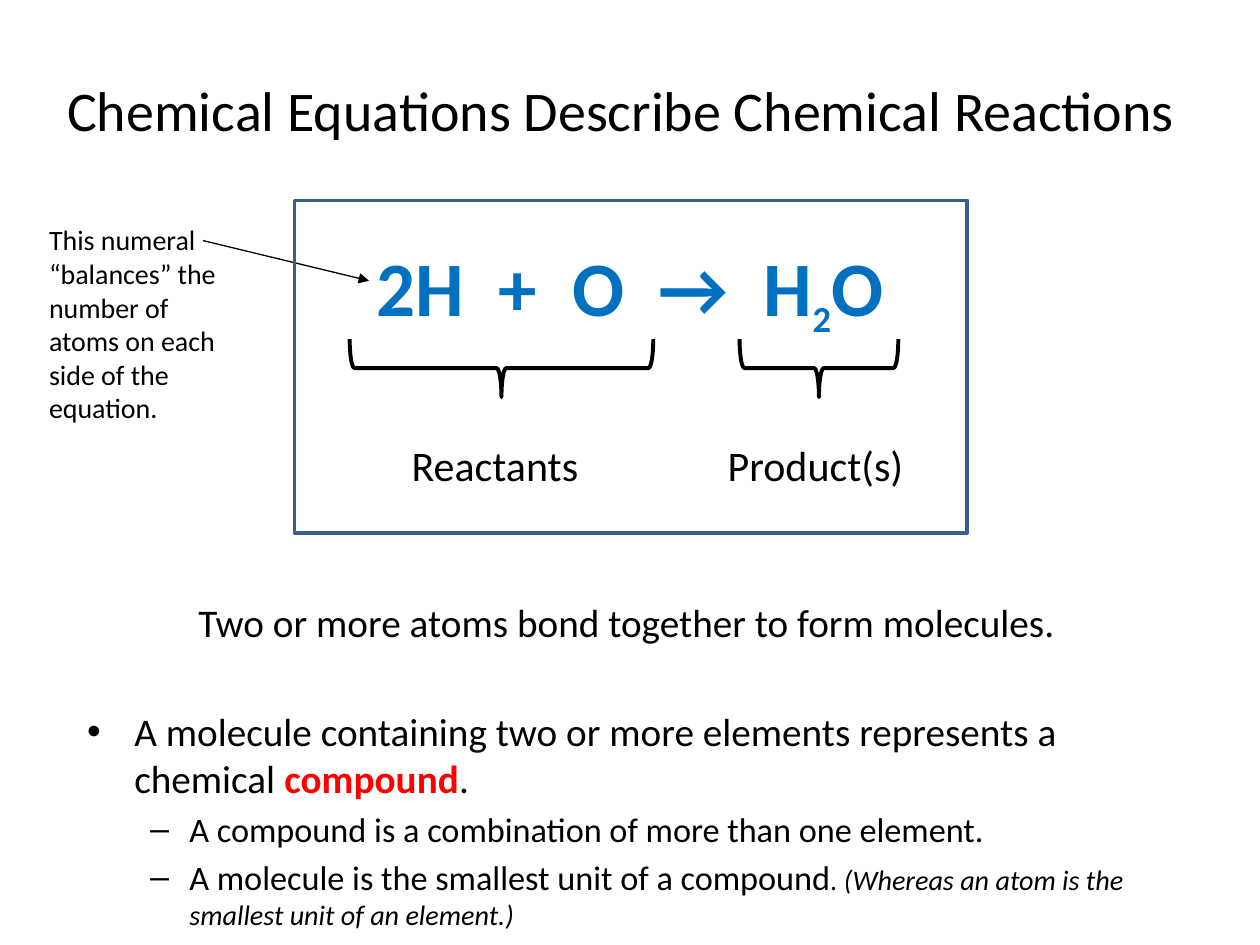
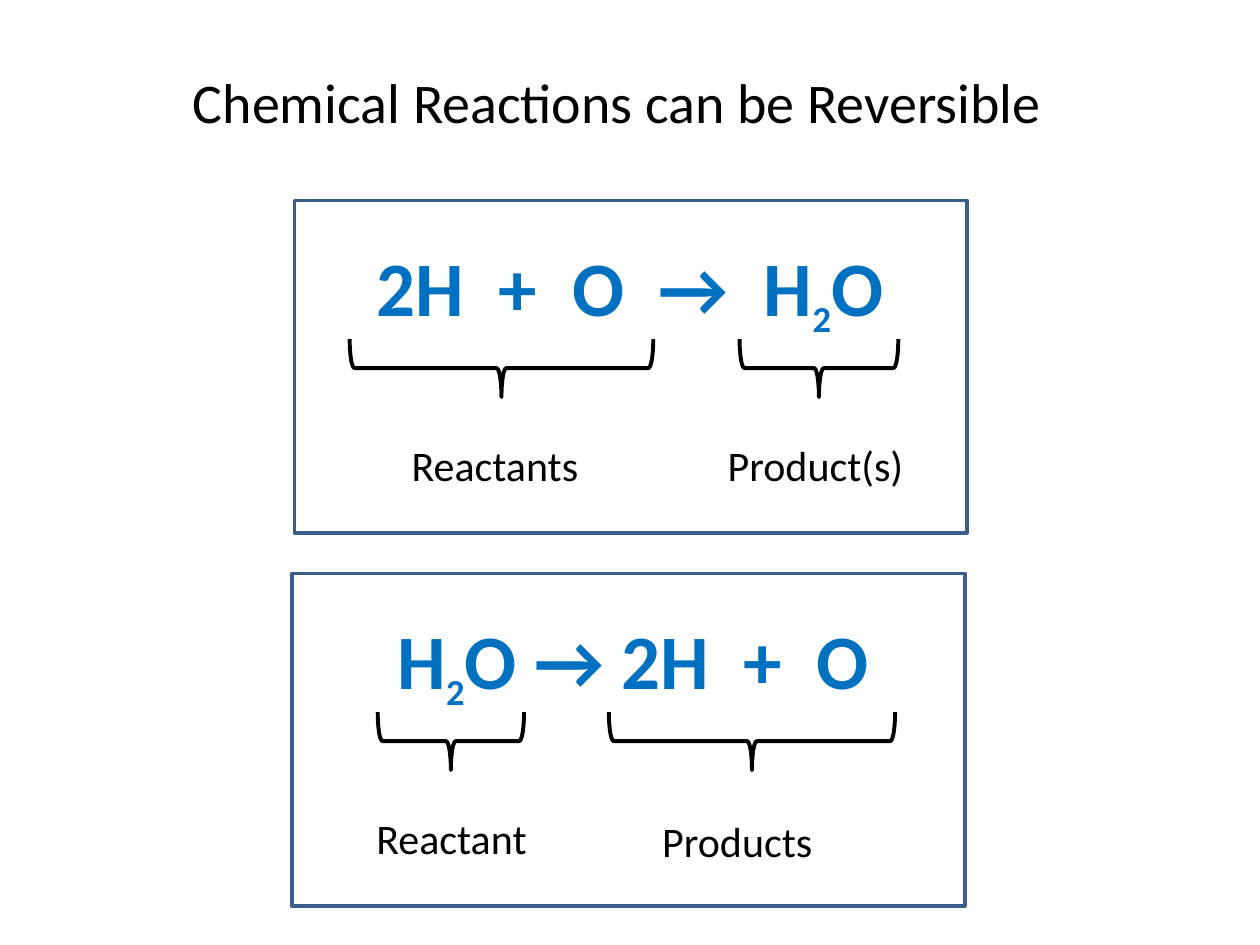
"""Build two slides on chemical equations and reversible reactions."""
from dataclasses import dataclass

from pptx import Presentation
from pptx import util as u
from pptx.dml.color import RGBColor
from pptx.enum import shapes, text
from pptx.oxml.ns import qn
from lxml import etree


@dataclass(frozen=True)
class Theme:
    """Colours, font and type sizes of the deck."""
    face: str = "Calibri"
    ink: str = "000000"
    blue: str = "0070C0"
    red: str = "FF0000"
    frame: str = "3A5F8C"
    title: float = 32
    lead: float = 22.4
    sub: float = 19.6
    aside: float = 16.1
    note: float = 16
    label: float = 24
    formula: float = 44
    index: float = 36


T = Theme()
FORWARD = {
    "shift": -0.3,
    "runs": ["2H  +  O  →  H", "2", "O"],
    "braces": [(4.17, 6.12), (10.57, 3.2)],
    "labels": [("Reactants", 2.11, 4.7), ("Product(s)", 8.48, 4.7)],
}
REVERSE = {
    "shift": -0.18,
    "runs": ["H", "2", "O → 2H  +  O"],
    "braces": [(3.2, 2.95), (9.27, 5.77)],
    "labels": [("Reactant", 1.45, 4.7), ("Products", 7.21, 4.75)],
}


def cms(*nums):
    """Turn numbers into lengths in centimetres."""
    return [u.Cm(n) for n in nums]


def style(font, size=None, color=T.ink, bold=None):
    """Give a font the deck's face, and a size, colour and weight."""
    font.name = T.face
    font.color.rgb = RGBColor.from_string(color)
    font.bold = bold
    if size:
        font.size = u.Pt(size)


def place(shape, left, top, width, height):
    """Move and size a shape, in centimetres."""
    shape.left, shape.top, shape.width, shape.height = cms(left, top, width, height)


def head(slide, words, *box):
    """Fill and place the title."""
    title = slide.shapes.title
    place(title, *box)
    title.text_frame.text = words
    title.text_frame.auto_size = text.MSO_AUTO_SIZE.NONE
    style(title.text_frame.paragraphs[0].font, T.title)


def label(parent, words, size, *box):
    """Add a wrapped text box with one paragraph."""
    frame = parent.add_textbox(*cms(*box)).text_frame
    frame.word_wrap = True
    frame.text = words
    style(frame.paragraphs[0].font, size)


def outline(parent, kind, box, color, width):
    """Add an unfilled preset shape."""
    shape = parent.add_shape(kind, *cms(*box))
    shape.shadow.inherit = False
    shape.fill.background()
    shape.line.color.rgb = RGBColor.from_string(color)
    shape.line.width = u.Pt(width)
    return shape


def brace(parent, mid, y, span):
    """Add a brace that points down, centred on a point."""
    deep = 1.17
    box = (mid - deep / 2, y - span / 2, deep, span)
    outline(parent, shapes.MSO_SHAPE.LEFT_BRACE, box, T.ink, 2.25).rotation = 270


def formula(parent, runs, *box):
    """Add an equation whose middle run is a subscript."""
    frame = parent.add_textbox(*cms(*box)).text_frame
    frame.word_wrap = True
    para = frame.paragraphs[0]
    para.alignment = text.PP_ALIGN.CENTER
    style(para.font, color=T.blue, bold=True)
    for words, size in zip(runs, (T.formula, T.index, T.formula)):
        run = para.add_run()
        run.text = words
        run.font.size = u.Pt(size)
        if size == T.index:
            run.font._element.set("baseline", "-25000")


def panel(slide, x, y, data):
    """Add a framed equation with its braces and labels as a group."""
    group = slide.shapes.add_group_shape().shapes
    formula(group, data["runs"], x + data["shift"], y + 0.66, 14.12, 2.13)
    for mid, span in data["braces"]:
        brace(group, x + mid, y + 3.38, span)
    for words, dx, dy in data["labels"]:
        label(group, words, T.label, x + dx, y + dy, 4.14, 1.27)
    outline(group, shapes.MSO_SHAPE.RECTANGLE, (x, y, 13.56, 6.71), T.frame, 2)


def arrow(slide, *ends):
    """Add a thin line with a triangle at its end."""
    line = slide.shapes.add_connector(shapes.MSO_CONNECTOR.STRAIGHT, *cms(*ends))
    line.line.color.rgb = RGBColor.from_string(T.ink)
    line.line.width = u.Pt(0.75)
    etree.SubElement(line.line._get_or_add_ln(), qn("a:tailEnd"), type="triangle")
    etree.SubElement(line._element.spPr, qn("a:effectLst"))


def item(para, size, *runs, level=0, gap=4.5):
    """Fill a body paragraph and return its runs."""
    para.level = level
    para.space_before = u.Pt(gap)
    style(para.font, size)
    made = []
    for words in runs:
        run = para.add_run()
        run.text = words
        made.append(run)
    return made


def body(slide):
    """Fill the body with a centred lead line and a bullet list."""
    hold = slide.placeholders[1]
    place(hold, 1.5, 11.94, 22.28, 6.65)
    frame = hold.text_frame
    frame.auto_size = text.MSO_AUTO_SIZE.NONE
    lead = frame.paragraphs[0]
    item(lead, T.lead, "Two or more atoms bond together to form molecules.")
    lead.alignment = text.PP_ALIGN.CENTER
    props = lead._p.get_or_add_pPr()
    props.set("marL", "0")
    props.set("indent", "0")
    props.find(qn("a:defRPr")).addprevious(etree.Element(qn("a:buNone")))
    term = item(frame.add_paragraph(), T.lead,
                "A molecule containing two or more elements represents a chemical ",
                "compound", ".", gap=35)[1]
    style(term.font, color=T.red, bold=True)
    item(frame.add_paragraph(), T.sub,
         "A compound is a combination of more than one element.", level=1, gap=4)
    aside = item(frame.add_paragraph(), T.sub,
                 "A molecule is the smallest unit of a compound",
                 ". (Whereas an atom is the smallest unit of an element.)",
                 level=1, gap=4)[1]
    aside.font.size = u.Pt(T.aside)
    aside.font.italic = True


def main():
    """Build both slides and save the deck."""
    deck = Presentation()
    deck.slide_width, deck.slide_height = cms(25.4, 19.05)

    first = deck.slides.add_slide(deck.slide_layouts[1])
    head(first, "Chemical Equations Describe Chemical Reactions", 0.74, 0.36, 23.57, 3.68)
    body(first)
    arrow(first, 4.09, 4.85, 7.44, 5.66)
    label(first.shapes, "This numeral “balances” the number of atoms on each side "
          "of the equation.", T.note, 0.74, 4.37, 4.27, 4.37)
    panel(first, 5.94, 4.04, FORWARD)

    second = deck.slides.add_slide(deck.slide_layouts[5])
    head(second, "Chemical Reactions can be Reversible", 1.5, 0.81, 21.89, 2.44)
    panel(second, 5.89, 11.56, REVERSE)
    panel(second, 5.94, 4.04, FORWARD)

    deck.save("out.pptx")


if __name__ == "__main__":
    main()
